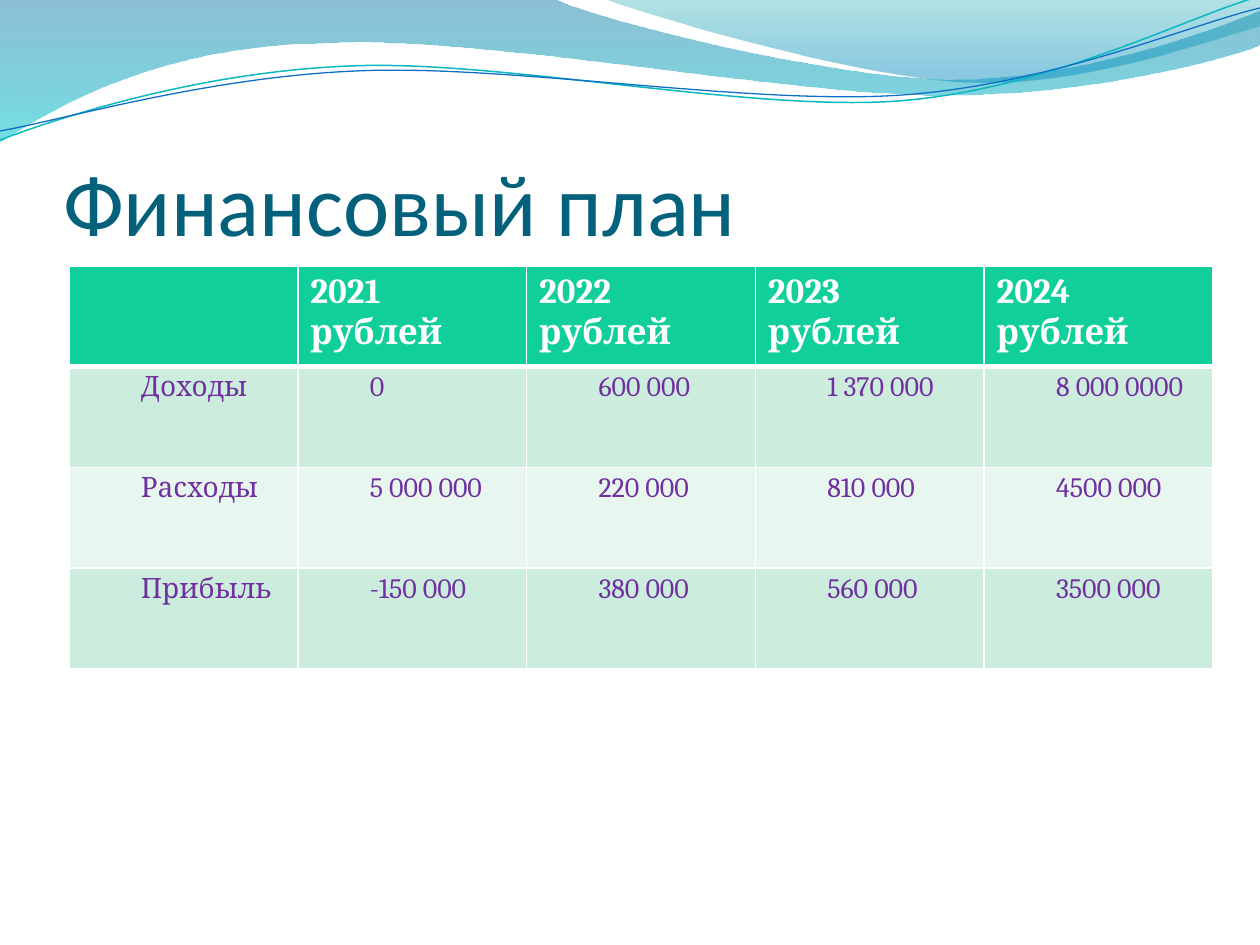
from pptx import Presentation
from pptx.dml.color import RGBColor
from pptx.enum.text import MSO_ANCHOR as Anchor, PP_ALIGN as Align
from pptx.oxml.ns import qn
from pptx.util import Emu, Pt
from lxml.etree import SubElement

SCALE = 914400 / 126

WHITE = RGBColor(0xFF, 0xFF, 0xFF)
TITLE_BLUE = RGBColor(0x04, 0x61, 0x7B)
PURPLE = RGBColor(0x70, 0x30, 0xA0)
HEADER_GREEN = RGBColor(0x10, 0xCF, 0x9B)
BAND_DARK = RGBColor(0xCC, 0xED, 0xDE)
BAND_LIGHT = RGBColor(0xE7, 0xF6, 0xEF)
DEEP_BLUE = RGBColor(0x00, 0x74, 0xA1)
AQUA = RGBColor(0x00, 0xC6, 0xCF)
TEAL = RGBColor(0x00, 0xA1, 0xA9)
SKY = RGBColor(0x00, 0x8B, 0xBF)
LINE_TEAL = RGBColor(0x0A, 0xB8, 0xBF)
LINE_BLUE = RGBColor(0x0F, 0x6F, 0xC6)

BROAD_WAVE = [
    (0, 0), (554, -1),
    (600, 21, 837, 79, 955, 79), (1075, 79, 1207, 33, 1260, 11),
    (1261, 45),
    (1239, 55, 1096, 96, 940, 95), (783, 95, 481, 35, 324, 43),
    (163, 45, 58, 105, -1, 142),
]
RIGHT_WAVE = [
    (604, -1),
    (641, 14, 859, 78, 969, 82), (1079, 87, 1211, 40, 1260, 26),
    (1260, 0),
]
TEAL_LINE = [
    (0, 140), (60, 117, 199, 72, 349, 66),
    (498, 59, 747, 112, 898, 101), (1050, 89, 1182, 19, 1257, -3),
]
BLUE_LINE = [
    (0, 131), (59, 121, 207, 77, 357, 71),
    (508, 64, 752, 106, 903, 95), (1053, 84, 1186, 26, 1260, 8),
]

ROWS = [
    ["", "2021\nрублей", "2022\nрублей", "2023\nрублей", "2024 рублей"],
    ["Доходы", "0", "600 000", "1\u00a0370 000", "8\u00a0000 0000"],
    ["Расходы", "5\u00a0000 000", "220 000", "810 000", "4500 000"],
    ["Прибыль", "-150 000", "380 000", "560 000", "3500 000"],
]


def px(length):
    return Emu(round(length * SCALE))


def bend_segments(shape, segments):
    steps = iter(list(shape._element.iter(qn("a:lnTo"))))
    for segment in segments[1:]:
        curve = next(steps)
        if len(segment) == 6:
            curve.tag = qn("a:cubicBezTo")
            for _ in range(2):
                step = next(steps)
                curve.append(step[0])
                step.getparent().remove(step)


def add_outline(page, segments, close):
    points = [
        (px(segment[i]), px(segment[i + 1]))
        for segment in segments for i in range(0, len(segment), 2)
    ]
    builder = page.shapes.build_freeform(*points[0])
    builder.add_line_segments(points[1:], close=close)
    shape = builder.convert_to_shape()
    bend_segments(shape, segments)
    shape.shadow.inherit = False
    return shape


def add_wave(page, segments, stops):
    wave = add_outline(page, segments, True)
    wave.line.fill.background()
    wave.fill.gradient()
    wave.fill.gradient_angle = 270
    for stop, (position, color, _) in zip(wave.fill.gradient_stops, stops):
        stop.position = position
        stop.color.rgb = color
    for color, (_, _, opacity) in zip(wave._element.iter(qn("a:srgbClr")), stops):
        SubElement(color, qn("a:alpha"), val=str(opacity * 1000))


def add_wave_line(page, segments, color, width):
    wave_line = add_outline(page, segments, False)
    wave_line.fill.background()
    wave_line.line.color.rgb = color
    wave_line.line.width = Pt(width)


def format_font(font, name, size, color, bold=False):
    font.name = name
    font.size = Pt(size)
    font.bold = bold
    font.color.rgb = color


def set_title(page, text):
    title = page.shapes.title
    page.shapes._spTree.append(title._element)
    title.left, title.top, title.width, title.height = px(63), px(97), px(1134), px(157)
    frame = title.text_frame
    frame.text = text
    frame.vertical_anchor = Anchor.BOTTOM
    frame.margin_left = frame.margin_right = frame.margin_bottom = 0
    para = frame.paragraphs[0]
    para.alignment = Align.LEFT
    format_font(para.runs[0].font, "Calibri", 50, TITLE_BLUE)


def set_borders(cell, bottom_width):
    properties = cell._tc.get_or_add_tcPr()
    widths = {"a:lnL": 1, "a:lnR": 1, "a:lnT": 1, "a:lnB": bottom_width}
    for index, (tag, width) in enumerate(widths.items()):
        border = SubElement(properties, qn(tag), w=str(Pt(width)))
        fill = SubElement(border, qn("a:solidFill"))
        SubElement(fill, qn("a:srgbClr"), val=str(WHITE))
        properties.insert(index, border)


def fill_cell(cell, text, row):
    header = row == 0
    cell.fill.solid()
    cell.fill.fore_color.rgb = HEADER_GREEN if header else BAND_DARK if row % 2 else BAND_LIGHT
    set_borders(cell, 3 if header else 1)
    if not header:
        cell.margin_left = cell.margin_right = px(9)
        cell.margin_top = cell.margin_bottom = 0
    cell.text_frame.text = text
    for para in cell.text_frame.paragraphs:
        if not header:
            para._p.get_or_add_pPr().set("marL", str(px(63)))
            para.line_spacing = 1.15
        for span in para.runs:
            if header:
                format_font(span.font, "Cambria", 20, WHITE, True)
            else:
                format_font(span.font, "Cambria", 16, PURPLE)


def add_finance_table(page):
    frame = page.shapes.add_table(len(ROWS), len(ROWS[0]), px(69), px(266), px(1144), px(403))
    for row, texts in enumerate(ROWS):
        for column, text in enumerate(texts):
            fill_cell(frame.table.cell(row, column), text, row)


def main():
    deck = Presentation()
    deck.slide_width, deck.slide_height = px(1260), px(945)
    page = deck.slides.add_slide(deck.slide_layouts[5])
    add_wave(page, BROAD_WAVE, [(0, DEEP_BLUE, 45), (1, AQUA, 55)])
    add_wave(page, RIGHT_WAVE, [(0, TEAL, 30), (0.8, SKY, 45)])
    add_wave_line(page, TEAL_LINE, LINE_TEAL, 0.85)
    add_wave_line(page, BLUE_LINE, LINE_BLUE, 0.75)
    set_title(page, "Финансовый план")
    add_finance_table(page)
    deck.save("out.pptx")


if __name__ == "__main__":
    main()
